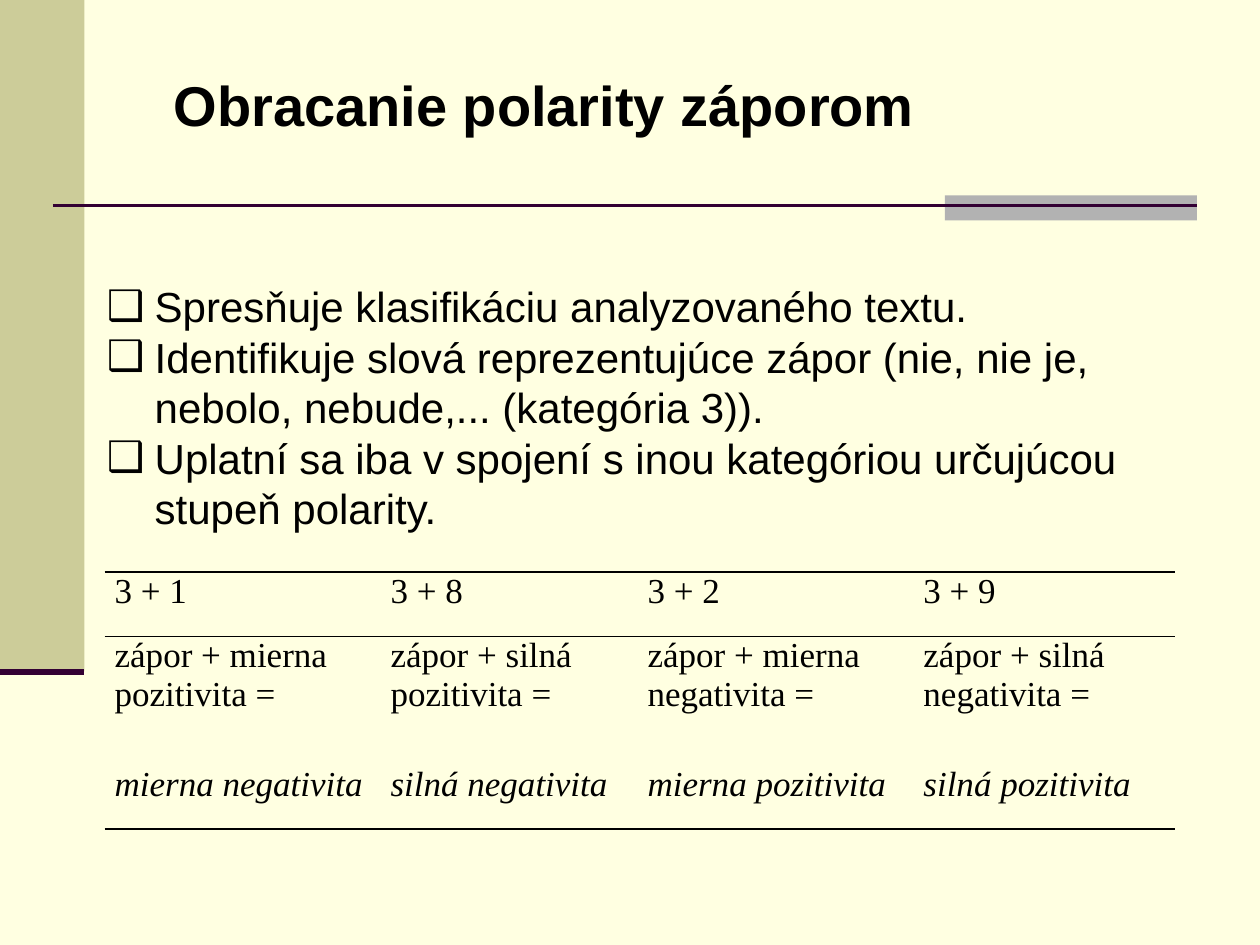
from lxml.etree import SubElement
from pptx import Presentation
from pptx.dml.color import RGBColor
from pptx.enum.shapes import MSO_CONNECTOR, MSO_SHAPE
from pptx.oxml.ns import qn
from pptx.util import Inches, Pt

CREAM = RGBColor(0xFF, 0xFF, 0xE1)
OLIVE = RGBColor(0xCC, 0xCC, 0x99)
GRAY = RGBColor(0xB2, 0xB2, 0xB2)
PLUM = RGBColor(0x33, 0x00, 0x33)
BLACK = RGBColor(0x00, 0x00, 0x00)

TITLE = "Obracanie polarity záporom"
BULLETS = [
    "Spresňuje klasifikáciu analyzovaného textu.",
    "Identifikuje slová reprezentujúce zápor (nie, nie je, nebolo, nebude,... (kategória 3)).",
    "Uplatní sa iba v spojení s inou kategóriou určujúcou stupeň polarity.",
]
RULES = [
    ("3 + 1", "3 + 8", "3 + 2", "3 + 9"),
    ("zápor + mierna pozitivita =", "zápor + silná pozitivita =",
     "zápor + mierna negativita =", "zápor + silná negativita ="),
    ("mierna negativita", "silná negativita", "mierna pozitivita", "silná pozitivita"),
]
COLUMN_WIDTHS = [2.19, 2.04, 2.19, 2.08]
ROW_HEIGHTS = [0.51, 1.02, 0.51]
ROW_BORDERS = [{"T": 1.5, "B": 1}, {"T": 1}, {"B": 1.5}]

PANELS = [((0, 0, 0.67, 5.33), OLIVE), ((7.5, 1.55, 2, 0.2), GRAY)]
LINES = [((0.42, 1.63, 9.5, 1.63), 1.5), ((0, 5.33, 0.67, 5.33), 3.5)]


def inches(values):
    return [Inches(value) for value in values]


def style(para, font_name, size, bold=False, italic=False):
    font = para.font
    font.name, font.size = font_name, Pt(size)
    font.bold, font.italic = bold, italic
    font.color.rgb = BLACK


def add_panel(page, place, color):
    panel = page.shapes.add_shape(MSO_SHAPE.RECTANGLE, *inches(place))
    panel.shadow.inherit = False
    panel.fill.solid()
    panel.fill.fore_color.rgb = color
    panel.line.fill.background()


def add_line(page, ends, width):
    line = page.shapes.add_connector(MSO_CONNECTOR.STRAIGHT, *inches(ends))
    line.line.color.rgb = PLUM
    line.line.width = Pt(width)
    SubElement(line._element.spPr, qn("a:effectLst"))


def add_bullet(para):
    properties = para._p.get_or_add_pPr()
    properties.set("marL", str(Inches(0.38)))
    properties.set("indent", str(-Inches(0.38)))
    SubElement(properties, qn("a:buFont"), typeface="Arial")
    SubElement(properties, qn("a:buChar"), char="❑")


def set_borders(cell, widths):
    properties = cell._tc.get_or_add_tcPr()
    for side in "LRTB":
        border = SubElement(properties, qn(f"a:ln{side}"))
        if side in widths:
            border.set("w", str(Pt(widths[side])))
            fill = SubElement(border, qn("a:solidFill"))
            SubElement(fill, qn("a:srgbClr"), val=str(BLACK))
        else:
            SubElement(border, qn("a:noFill"))


def add_title(page):
    box = page.shapes.add_textbox(*inches((1.28, 0.51, 6.5, 0.64)))
    para = box.text_frame.paragraphs[0]
    para.text = TITLE
    style(para, "Arial", 32, bold=True)


def add_bullets(page):
    box = page.shapes.add_textbox(*inches((0.75, 2.18, 8.74, 2.12)))
    frame = box.text_frame
    frame.word_wrap = True
    frame.text = "\n".join(BULLETS)
    for para in frame.paragraphs:
        style(para, "Arial", 24)
        add_bullet(para)


def add_rules(page):
    place = (0.83, 4.54, sum(COLUMN_WIDTHS), sum(ROW_HEIGHTS))
    table = page.shapes.add_table(len(RULES), len(COLUMN_WIDTHS), *inches(place)).table
    table.first_row = table.horz_banding = False
    for column, width in zip(table.columns, COLUMN_WIDTHS):
        column.width = Inches(width)
    for row, height, texts, widths in zip(table.rows, ROW_HEIGHTS, RULES, ROW_BORDERS):
        row.height = Inches(height)
        for cell, text in zip(row.cells, texts):
            cell.margin_left = cell.margin_right = Inches(0.08)
            cell.margin_top = cell.margin_bottom = 0
            set_borders(cell, widths)
            cell.fill.background()
            cell.text = text
            style(cell.text_frame.paragraphs[0], "Times New Roman", 20, italic=texts is RULES[-1])


def main():
    deck = Presentation()
    deck.slide_width, deck.slide_height = Inches(10), Inches(7.5)
    page = deck.slides.add_slide(deck.slide_layouts[6])
    page.background.fill.solid()
    page.background.fill.fore_color.rgb = CREAM
    for place, color in PANELS:
        add_panel(page, place, color)
    for ends, width in LINES:
        add_line(page, ends, width)
    add_title(page)
    add_bullets(page)
    add_rules(page)
    deck.save("out.pptx")


if __name__ == "__main__":
    main()
